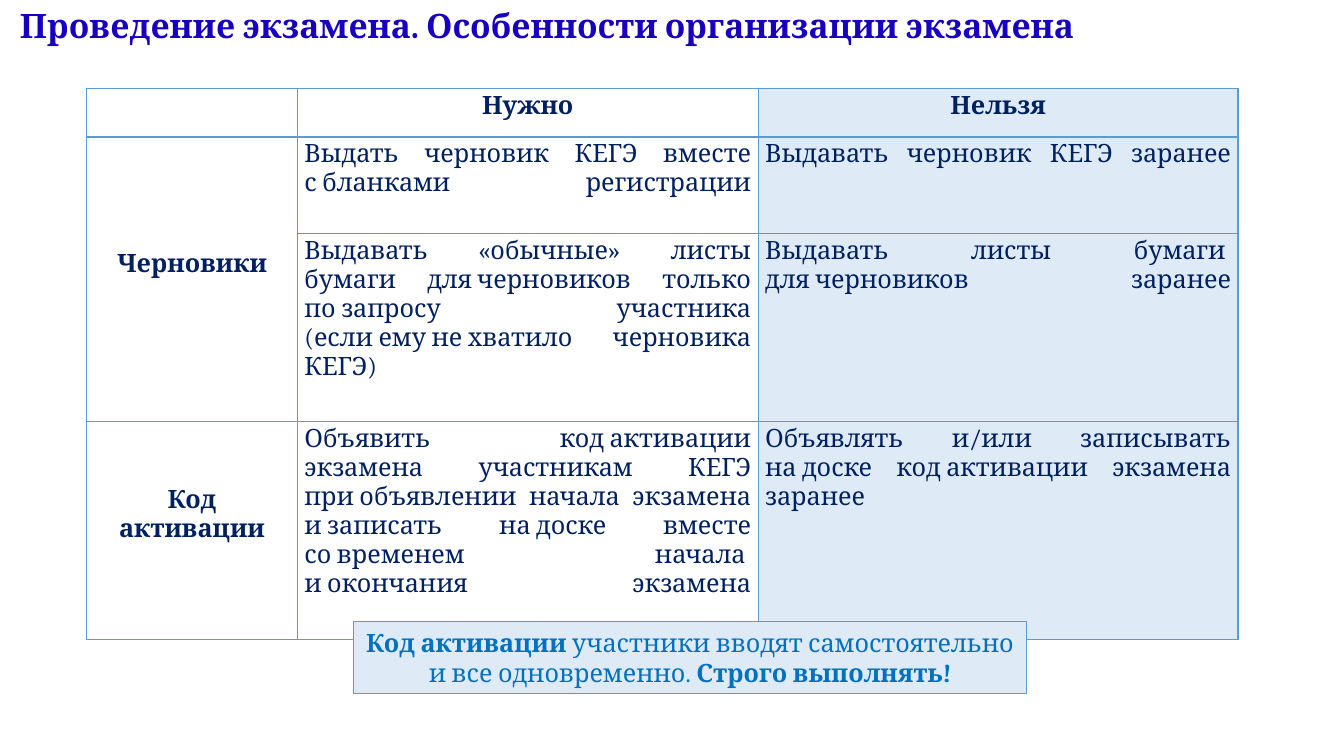
from lxml.etree import SubElement
from pptx import Presentation
from pptx.dml.color import RGBColor
from pptx.enum.shapes import MSO_SHAPE
from pptx.enum.text import MSO_ANCHOR, MSO_AUTO_SIZE, PP_ALIGN
from pptx.oxml.ns import qn
from pptx.util import Inches, Pt

VIOLET = RGBColor(0x17, 0x00, 0xC0)
NAVY = RGBColor(0x00, 0x20, 0x60)
BLUE = RGBColor(0x00, 0x70, 0xC0)
SKY = RGBColor(0x5B, 0x9B, 0xD5)
PALE = RGBColor(0xDE, 0xEB, 0xF7)

TIE = "~"
HARD_SPACE = chr(160)
COLUMN_WIDTHS = (2.09, 4.57, 4.76)
ROW_HEIGHTS = (0.48, 0.54, 1.5, 1.9)
RULES = (
    ("", "Нужно", "Нельзя"),
    ("Черновики\n",
     "Выдать черновик КЕГЭ вместе с~бланками регистрации\n",
     "Выдавать черновик КЕГЭ заранее\n"),
    ("",
     "Выдавать «обычные» листы бумаги для~черновиков только по~запросу участника "
     "(если~ему~не~хватило черновика КЕГЭ)\n",
     "Выдавать листы бумаги~\nдля~черновиков заранее\n"),
    ("Код активации\n",
     "Объявить код~активации экзамена участникам КЕГЭ при~объявлении начала экзамена "
     "и~записать на~доске вместе со~временем начала~\nи~окончания экзамена\n",
     "Объявлять и/или записывать на~доске код~активации экзамена заранее"),
)


def write(para, text, size=18, color=NAVY, bold=False, align=None, font="Cambria"):
    if align is not None:
        para.alignment = align
    for index, line in enumerate(text.replace(TIE, HARD_SPACE).split("\n")):
        if index:
            para.add_line_break()
        if line:
            span = para.add_run()
            span.text = line
            span.font.name = font
            span.font.size = Pt(size)
            span.font.bold = bold
            span.font.color.rgb = color


class ExamSlide:
    """Draws the elements of one slide in a shared style."""

    def __init__(self, deck):
        self.page = deck.slides.add_slide(deck.slide_layouts[6])
        self.line, self.fill = SKY, PALE

    def title(self, text, left, top, width, height):
        box = self.page.shapes.add_textbox(*map(Inches, (left, top, width, height)))
        box.text_frame.word_wrap = True
        box.text_frame.auto_size = MSO_AUTO_SIZE.SHAPE_TO_FIT_TEXT
        write(box.text_frame.paragraphs[0], text, size=24, color=VIOLET, bold=True)

    def callout(self, spans, left, top, width, height):
        box = self.page.shapes.add_shape(
            MSO_SHAPE.RECTANGLE, *map(Inches, (left, top, width, height)))
        box.shadow.inherit = False
        box.fill.solid()
        box.fill.fore_color.rgb = self.fill
        box.line.color.rgb = self.line
        box.line.width = Pt(0.75)
        box.text_frame.word_wrap = True
        box.text_frame.auto_size = MSO_AUTO_SIZE.SHAPE_TO_FIT_TEXT
        for text, bold in spans:
            write(box.text_frame.paragraphs[0], text, color=BLUE, bold=bold,
                  align=PP_ALIGN.CENTER)

    def border(self, cell):
        properties = cell._tc.get_or_add_tcPr()
        for position, side in enumerate(("lnL", "lnR", "lnT", "lnB")):
            edge = SubElement(properties, qn(f"a:{side}"), w=str(Pt(1)))
            solid = SubElement(edge, qn("a:solidFill"))
            SubElement(solid, qn("a:srgbClr"), val=str(self.line))
            properties.insert(position, edge)

    def table(self, rows, left, top, width, height):
        frame = self.page.shapes.add_table(
            len(rows), len(rows[0]), *map(Inches, (left, top, width, height)))
        table = frame.table
        table.first_row = table.horz_banding = False
        for column, size in zip(table.columns, COLUMN_WIDTHS):
            column.width = Inches(size)
        for row, size in zip(table.rows, ROW_HEIGHTS):
            row.height = Inches(size)
        for row_index, row in enumerate(rows):
            for column_index, text in enumerate(row):
                cell = table.cell(row_index, column_index)
                heading = row_index == 0 or column_index == 0
                cell.margin_left = cell.margin_right = Inches(0.07)
                cell.margin_top = cell.margin_bottom = Inches(0.03)
                if column_index == 0:
                    cell.vertical_anchor = MSO_ANCHOR.MIDDLE
                if column_index == 2:
                    cell.fill.solid()
                    cell.fill.fore_color.rgb = self.fill
                else:
                    cell.fill.background()
                self.border(cell)
                write(cell.text_frame.paragraphs[0], text, bold=heading,
                      align=PP_ALIGN.CENTER if heading else PP_ALIGN.JUSTIFY)
        table.cell(1, 0).merge(table.cell(2, 0))


def main():
    deck = Presentation()
    deck.slide_width, deck.slide_height = Inches(13.33), Inches(7.5)
    slide = ExamSlide(deck)
    slide.title("Проведение экзамена. Особенности организации экзамена", 0.1, 0, 13.24, 0.5)
    slide.table(RULES, 0.86, 0.88, 11.43, 4.92)
    slide.callout(
        (("Код активации~", True),
         ("участники вводят самостоятельно и~все~одновременно.~", False),
         ("Строго выполнять!", True)),
        3.51, 6.17, 6.67, 0.71)
    deck.save("out.pptx")


if __name__ == "__main__":
    main()
